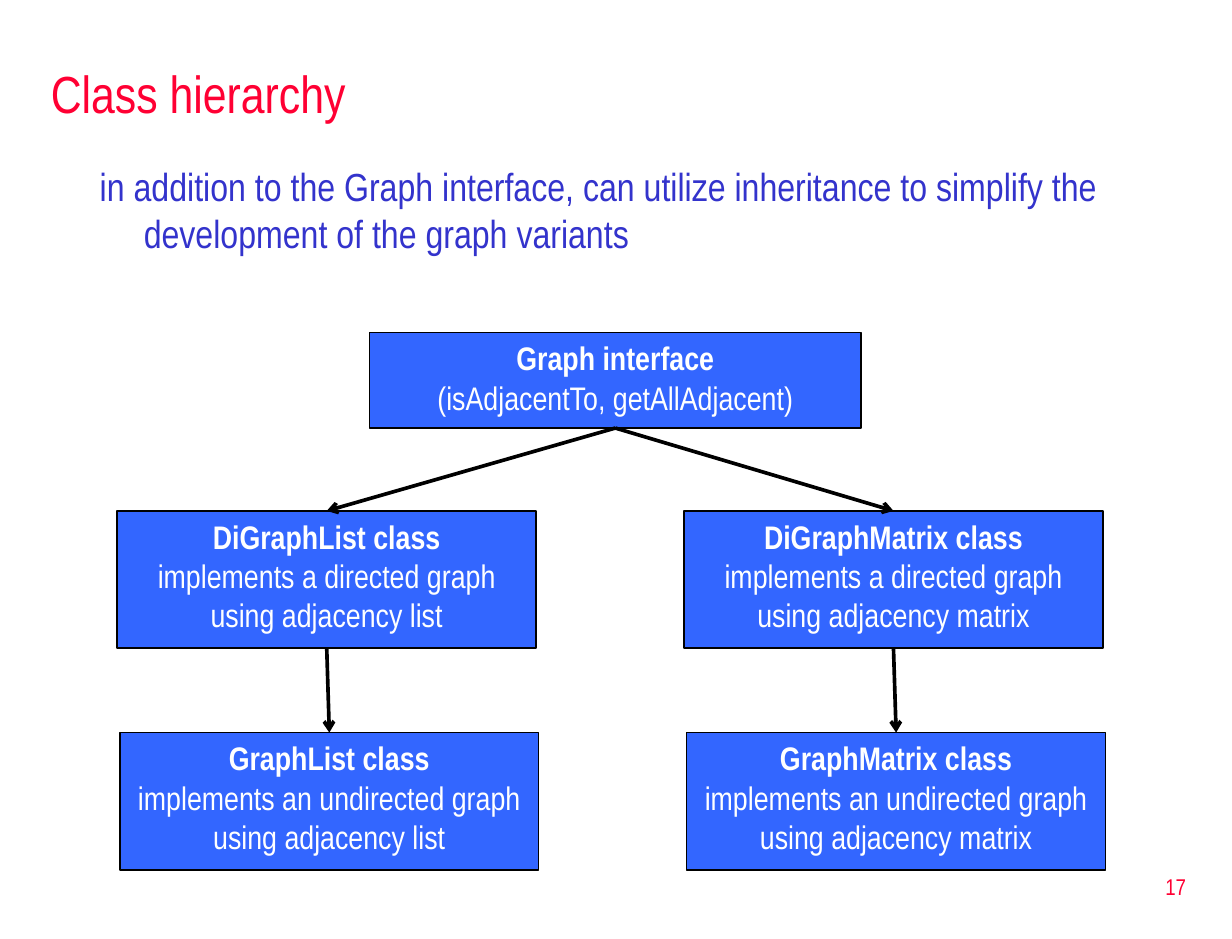
from lxml.etree import SubElement
from pptx import Presentation
from pptx.dml.color import RGBColor
from pptx.enum.shapes import MSO_CONNECTOR, MSO_SHAPE
from pptx.enum.text import MSO_ANCHOR, MSO_AUTO_SIZE, PP_ALIGN
from pptx.oxml.ns import qn
from pptx.util import Pt

RED = RGBColor(0xFF, 0x00, 0x33)
INDIGO = RGBColor(0x33, 0x33, 0xCC)
BLUE = RGBColor(0x33, 0x66, 0xFF)
WHITE = RGBColor(0xFF, 0xFF, 0xFF)
BLACK = RGBColor(0x00, 0x00, 0x00)

BOTTOM, TOP = 2, 0
CLASS_WIDTH, CLASS_HEIGHT = 257, 84.2
COLUMN_STEP = 347.8
DIRECTED_LEFT, DIRECTED_TOP = 72, 313.4
UNDIRECTED_LEFT, UNDIRECTED_TOP = 73.6, 449.4


class HierarchySlide:
    font_name = "Arial Narrow"

    def __init__(self, deck):
        self.slide = deck.slides.add_slide(deck.slide_layouts[1])
        self.shapes = self.slide.shapes

    def place(self, shape, left, top, width, height):
        shape.left, shape.top = Pt(left), Pt(top)
        shape.width, shape.height = Pt(width), Pt(height)

    def add_text(self, paragraph, text, size, color, align=PP_ALIGN.LEFT, bold=False):
        paragraph.alignment = align
        run = paragraph.add_run()
        run.text = text
        run.font.name = self.font_name
        run.font.size = Pt(size)
        run.font.bold = bold
        run.font.color.rgb = color

    def title(self, text, *bounds):
        heading = self.shapes.title
        self.place(heading, *bounds)
        frame = heading.text_frame
        frame.auto_size = MSO_AUTO_SIZE.NONE
        frame.vertical_anchor = MSO_ANCHOR.MIDDLE
        self.add_text(frame.paragraphs[0], text, 32, RED)

    def body(self, text, *bounds):
        summary = self.slide.placeholders[1]
        self.place(summary, *bounds)
        frame = summary.text_frame
        frame.auto_size = MSO_AUTO_SIZE.NONE
        paragraph = frame.paragraphs[0]
        self.add_text(paragraph, text, 24, INDIGO)
        properties = paragraph._p.get_or_add_pPr()
        properties.set("marL", str(Pt(27)))
        properties.set("indent", str(-Pt(27)))
        SubElement(properties, qn("a:buNone"))

    def page_number(self, text, *bounds):
        frame = self.shapes.add_textbox(*map(Pt, bounds)).text_frame
        frame.word_wrap = True
        frame.vertical_anchor = MSO_ANCHOR.MIDDLE
        self.add_text(frame.paragraphs[0], text, 14, RED, PP_ALIGN.RIGHT)

    def box(self, heading, detail, *bounds):
        box = self.shapes.add_shape(MSO_SHAPE.RECTANGLE, *map(Pt, bounds))
        box.shadow.inherit = False
        box.fill.solid()
        box.fill.fore_color.rgb = BLUE
        box.line.color.rgb = BLACK
        box.line.width = Pt(1)
        frame = box.text_frame
        frame.word_wrap = True
        frame.vertical_anchor = MSO_ANCHOR.TOP
        self.add_text(frame.paragraphs[0], heading, 20, WHITE, PP_ALIGN.CENTER, True)
        self.add_text(frame.add_paragraph(), detail, 20, WHITE, PP_ALIGN.CENTER)
        return box

    def arrow(self, parent, child):
        """Join the bottom of the parent box to the top of the child box."""
        link = self.shapes.add_connector(MSO_CONNECTOR.STRAIGHT, 0, 0, 0, 0)
        link.begin_connect(parent, BOTTOM)
        link.end_connect(child, TOP)
        link.line.color.rgb = BLACK
        link.line.width = Pt(2.25)
        SubElement(link.line._get_or_add_ln(), qn("a:tailEnd"), type="arrow")
        SubElement(link._element.spPr, qn("a:effectLst"))


def main():
    deck = Presentation()
    deck.slide_width, deck.slide_height = Pt(756), Pt(576)
    page = HierarchySlide(deck)

    page.title("Class hierarchy", 24, 30, 714, 54)
    page.body("in addition to the Graph interface, can utilize inheritance to "
              "simplify the development of the graph variants", 54, 96, 651.6, 69)
    page.page_number("17", 577.5, 525, 157.5, 38)

    interface = page.box("Graph interface", "(isAdjacentTo, getAllAdjacent)",
                         226.8, 204, 301.6, 58.6)
    for column, storage in enumerate(("List", "Matrix")):
        offset = column * COLUMN_STEP
        using = f"using adjacency {storage.lower()}"
        directed = page.box(
            f"DiGraph{storage} class", f"implements a directed graph {using}",
            DIRECTED_LEFT + offset, DIRECTED_TOP, CLASS_WIDTH, CLASS_HEIGHT)
        undirected = page.box(
            f"Graph{storage} class", f"implements an undirected graph {using}",
            UNDIRECTED_LEFT + offset, UNDIRECTED_TOP, CLASS_WIDTH, CLASS_HEIGHT)
        page.arrow(interface, directed)
        page.arrow(directed, undirected)

    deck.save("out.pptx")


if __name__ == "__main__":
    main()
